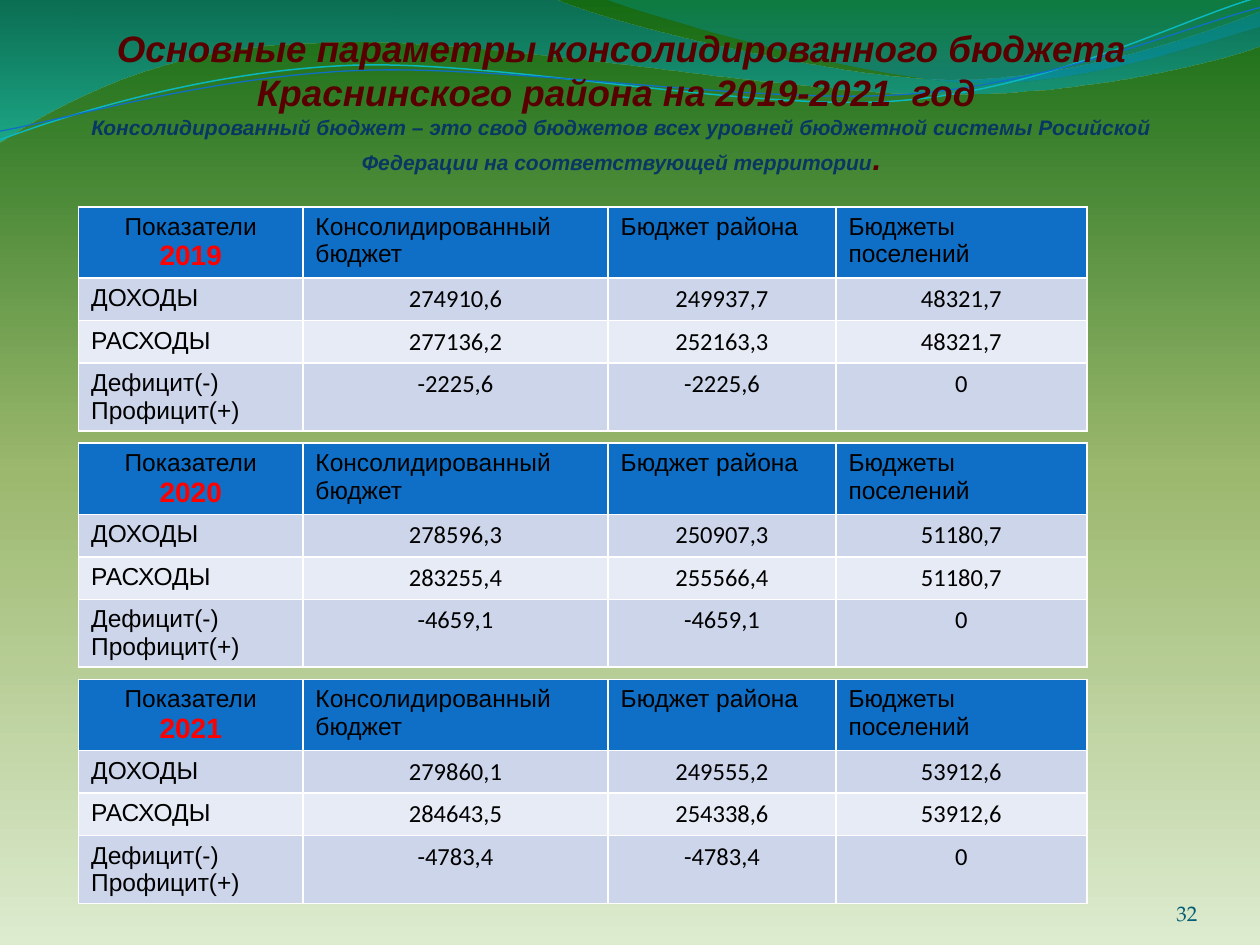
from lxml import etree
from pptx import Presentation
from pptx.dml.color import RGBColor
from pptx.enum import text as t
from pptx.oxml import ns
from pptx.util import Pt

MID, LEFT, RIGHT = t.PP_ALIGN.CENTER, t.PP_ALIGN.LEFT, t.PP_ALIGN.RIGHT

# Each outline: start point, then steps; two numbers draw a line, six a curve.
BANDS = [
    ((0, -0.7), [
        (316.8, -0.7),
        (342.7, 12.2, 478.1, 45.4, 545.8, 45.4),
        (614.2, 45.4, 689.8, 18.7, 720, 6.5),
        (720.7, 25.9),
        (707.8, 31.7, 626.4, 54.7, 537.1, 54),
        (447.8, 54, 275, 20.2, 185, 24.5),
        (92.9, 25.2, 33.1, 59.8, -0.7, 81.4),
    ], [(0, "0074A1", 45), (100, "00C6CF", 55)]),
    ((344.9, -0.7), [
        (366.5, 7.9, 491, 44.6, 553.7, 46.8),
        (616.3, 49.7, 691.9, 23, 720, 15.1),
        (720, 0),
    ], [(0, "00A1A9", 30), (80, "008BBF", 45)]),
]
WAVES = [
    ((0, 79.9), [
        (34.6, 67, 113.8, 41, 199.4, 37.4),
        (284.4, 33.8, 427, 64.1, 513.4, 57.6),
        (599.8, 51.1, 675.4, 10.8, 718.6, -1.4),
    ], "0AB8BF", 0.85),
    ((0, 74.9), [
        (33.8, 69.1, 118.1, 43.9, 203.8, 40.3),
        (290.2, 36.7, 429.8, 59.8, 516.2, 54),
        (601.9, 48.2, 677.5, 15.1, 720, 4.3),
    ], "0F6FC6", 0.75),
]
SKY = [(0, "DDEBCF", 100), (50, "9CB86E", 100), (100, "156B13", 100)]

TITLE = ["Основные параметры консолидированного бюджета",
         "Краснинского района на 2019-2021  год "]
NOTE = ("Консолидированный бюджет – это свод бюджетов всех уровней бюджетной "
        "системы Росийской Федерации на соответствующей территории")

HEADS = ["Консолидированный  бюджет", "Бюджет района", "Бюджеты поселений"]
LABELS = [["ДОХОДЫ"], ["РАСХОДЫ"], ["Дефицит(-)", "Профицит(+)"]]
YEARS = {
    "2019": [["274910,6", "249937,7", "48321,7"],
             ["277136,2", "252163,3", "48321,7"],
             ["-2225,6", "-2225,6", "0"]],
    "2020": [["278596,3", "250907,3", "51180,7"],
             ["283255,4", "255566,4", "51180,7"],
             ["-4659,1", "-4659,1", "0"]],
    "2021": [["279860,1", "249555,2", "53912,6"],
             ["284643,5", "254338,6", "53912,6"],
             ["-4783,4", "-4783,4", "0"]],
}
COLS = [128.2, 174.4, 130.2, 143.4]
ROWS = [26.6, 18, 18, 28.8]
FILLS = ["0F6FC6", "CCD5EA", "E7EBF5", "CCD5EA"]
X, Y, STEP, TALL = 44.9, 118.2, 135, 131.8


def color(code):
    return RGBColor.from_string(code)


def write(frame, text, size=14, font="Arial", ink="000000", bold=False,
          slant=False, align=LEFT, new=True):
    """Add a run, in a new paragraph unless new is False; reuse an empty one."""
    para = frame.paragraphs[-1]
    if new and para.runs:
        para = frame.add_paragraph()
    para.alignment = align
    run = para.add_run()
    run.text = text
    face = run.font
    face.size, face.name, face.bold, face.italic = Pt(size), font, bold, slant
    face.color.rgb = color(ink)


def node(parent, tag, **attrs):
    return etree.SubElement(parent, ns.qn(tag),
                            {key: str(val) for key, val in attrs.items()})


def shade(fill, props, stops, angle):
    """Set a linear gradient with any number of stops and opacities."""
    fill.gradient()
    grad = props.find(".//" + ns.qn("a:gradFill"))
    for child in list(grad):
        grad.remove(child)
    group = node(grad, "a:gsLst")
    for pos, code, alpha in stops:
        tint = node(node(group, "a:gs", pos=pos * 1000), "a:srgbClr", val=code)
        if alpha < 100:
            node(tint, "a:alpha", val=alpha * 1000)
    node(grad, "a:lin", ang=angle * 60000, scaled=0)


def draw(shapes, start, steps, close):
    """Build the outline from all its points, then bend the curved steps."""
    unit = 100
    pts = [start] + [step[i:i + 2] for step in steps
                     for i in range(0, len(step), 2)]
    pts = [(x * unit, y * unit) for x, y in pts]
    pen = shapes.build_freeform(*pts[0], scale=Pt(1) / unit)
    pen.add_line_segments(pts[1:], close=False)
    shape = pen.convert_to_shape()
    shape.shadow.inherit = False
    route = shape.element.find(".//" + ns.qn("a:path"))
    lines = iter(route.findall(ns.qn("a:lnTo")))
    for step in steps:
        parts = [next(lines) for _ in range(len(step) // 2)]
        if len(parts) == 3:
            curve = etree.Element(ns.qn("a:cubicBezTo"))
            parts[0].addprevious(curve)
            for part in parts:
                curve.append(part[0])
                route.remove(part)
    if close:
        node(route, "a:close")
    return shape


def edge(cell):
    props = cell._tc.get_or_add_tcPr()
    for i, side in enumerate("LRTB"):
        line = etree.Element(ns.qn("a:ln" + side), w=str(Pt(1)))
        node(node(line, "a:solidFill"), "a:srgbClr", val="FFFFFF")
        props.insert(i, line)


def grid(shapes, top, year, data):
    frame = shapes.add_table(len(ROWS), len(COLS), Pt(X), Pt(top),
                             Pt(sum(COLS)), Pt(sum(ROWS)))
    table = frame.table
    for col, wide in zip(table.columns, COLS):
        col.width = Pt(wide)
    for row, high in zip(table.rows, ROWS):
        row.height = Pt(high)
    frame.height = Pt(TALL)
    for r, fill in enumerate(FILLS):
        for c in range(len(COLS)):
            cell = table.cell(r, c)
            cell.fill.solid()
            cell.fill.fore_color.rgb = color(fill)
            edge(cell)
            body = cell.text_frame
            if r and c:
                write(body, data[r - 1][c - 1], font="Calibri", align=MID)
            elif r:
                for part in LABELS[r - 1]:
                    write(body, part)
            elif c:
                write(body, HEADS[c - 1])
            else:
                write(body, "Показатели", align=MID)
                write(body, year, size=16, ink="FF0000", bold=True, align=MID)


def place(shape, left, top, wide, high, inset=0):
    shape.left, shape.top, shape.width, shape.height = map(
        Pt, (left, top, wide, high))
    body = shape.text_frame
    body.word_wrap = True
    body.auto_size = t.MSO_AUTO_SIZE.NONE
    body.vertical_anchor = t.MSO_ANCHOR.BOTTOM
    body.margin_left = body.margin_right = body.margin_bottom = 0
    body.margin_top = Pt(inset)
    return body


def main():
    deck = Presentation()
    deck.slide_width, deck.slide_height = Pt(720), Pt(540)
    slide = deck.slides.add_slide(deck.slide_layouts[5])
    shapes = slide.shapes
    shade(slide.background.fill, slide.element, SKY, 270)

    for start, steps, stops in BANDS:
        band = draw(shapes, start, steps, True)
        shade(band.fill, band.element.spPr, stops, 90)
        band.line.fill.background()
    for start, steps, ink, wide in WAVES:
        wave = draw(shapes, start, steps, False)
        wave.fill.background()
        wave.line.color.rgb = color(ink)
        wave.line.width = Pt(wide)

    title = shapes.title
    title.element.getparent().append(title.element)  # in front of the waves
    body = place(title, X, 0, 620.6, 101.2, 3.6)
    look = dict(bold=True, slant=True, align=MID)
    for line in TITLE:
        write(body, line, size=21, ink="580000", **look)
    write(body, NOTE, size=12, ink="083763", **look)
    write(body, ".", size=18, ink="580000", new=False, **look)

    for i, (year, data) in enumerate(YEARS.items()):
        grid(shapes, Y + i * STEP, year, data)

    page = place(shapes.add_textbox(0, 0, 0, 0), 624.4, 500.4, 59.8, 28.8)
    write(page, "32", size=12, font="TeX Gyre Pagella", ink="045D75",
          align=RIGHT)
    deck.save("out.pptx")


if __name__ == "__main__":
    main()
